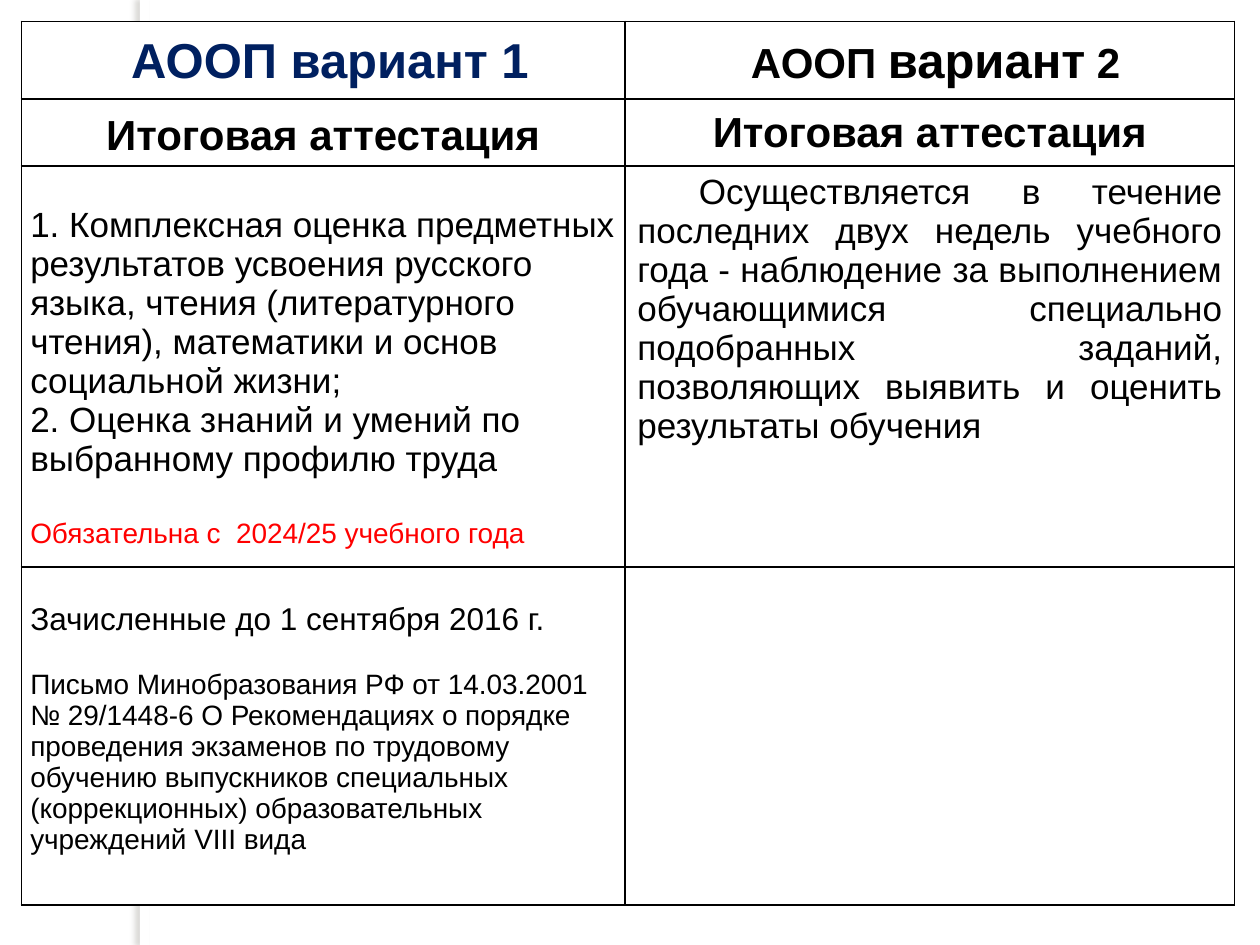
from typing import NamedTuple

from lxml.etree import SubElement
from pptx import Presentation
from pptx.dml.color import RGBColor
from pptx.enum.shapes import MSO_SHAPE
from pptx.enum.text import MSO_ANCHOR, PP_ALIGN
from pptx.oxml import parse_xml
from pptx.oxml.ns import nsdecls, qn
from pptx.util import Cm, Pt

WHITE = RGBColor(0xFF, 0xFF, 0xFF)
BLACK = RGBColor(0x00, 0x00, 0x00)
NAVY = RGBColor(0x00, 0x20, 0x60)
RED = RGBColor(0xFF, 0x00, 0x00)
SHADOW = RGBColor(0x73, 0x6F, 0x63)
FONT = "Arial"

COLUMN_SHARES = (0.4975, 0.5025)
ROW_HEIGHTS = (1.57, 1.35, 8.08, 6.81)
TITLE_MARGINS = (0.1, 0.1)
LEFT_MARGINS = (0.18, 0)
RIGHT_MARGINS = (0.25, 0.13)


class Box(NamedTuple):
    left: float
    top: float
    width: float
    height: float


def add_strip(slide, box):
    strip = slide.shapes.add_shape(MSO_SHAPE.RECTANGLE, *map(Cm, box))
    strip.fill.solid()
    strip.fill.fore_color.rgb = WHITE
    strip.line.fill.background()
    strip.shadow.inherit = False
    effects = strip._element.spPr.find(qn("a:effectLst"))
    effects.append(parse_xml(
        f'<a:outerShdw {nsdecls("a")} blurRad="{Pt(3)}" dist="{Pt(3)}" dir="10800000">'
        f'<a:srgbClr val="{SHADOW}"><a:alpha val="25000"/></a:srgbClr></a:outerShdw>'))


def style_cell(cell, margins, top_space=0, anchor=MSO_ANCHOR.TOP):
    properties = cell._tc.get_or_add_tcPr()
    for side in ("lnL", "lnR", "lnT", "lnB"):
        border = SubElement(properties, qn(f"a:{side}"), w=str(Pt(1)))
        fill = SubElement(border, qn("a:solidFill"))
        SubElement(fill, qn("a:srgbClr"), val=str(BLACK))
    cell.fill.solid()
    cell.fill.fore_color.rgb = WHITE
    side_margin, end_margin = margins
    cell.margin_left = cell.margin_right = Cm(side_margin)
    cell.margin_top = Cm(end_margin + top_space)
    cell.margin_bottom = Cm(end_margin)
    cell.vertical_anchor = anchor


def write_paragraph(cell, runs, bold=False, color=BLACK, align=PP_ALIGN.LEFT,
                    spacing=None, before=0, indent=0):
    text_frame = cell.text_frame
    paragraph = text_frame.add_paragraph() if cell.text else text_frame.paragraphs[0]
    paragraph.alignment = align
    if spacing:
        paragraph.line_spacing = spacing
    if before:
        paragraph.space_before = Pt(before)
    if indent:
        paragraph._p.get_or_add_pPr().set("indent", str(Cm(indent)))
    for text, size in runs:
        run = paragraph.add_run()
        run.text = text
        run.font.name = FONT
        run.font.size = Pt(size)
        run.font.bold = bold
        run.font.color.rgb = color


def fill_headings(table):
    headings = (
        (NAVY, [(" АООП вариант 1", 28)], LEFT_MARGINS, 1.15),
        (BLACK, [(" АООП ", 24), ("вариант", 28), (" 2", 24)], RIGHT_MARGINS, None),
    )
    for column, (color, runs, margins, spacing) in enumerate(headings):
        title, subtitle = table.cell(0, column), table.cell(1, column)
        style_cell(title, TITLE_MARGINS)
        write_paragraph(title, runs, True, color, PP_ALIGN.CENTER, 1.15)
        style_cell(subtitle, margins, anchor=MSO_ANCHOR.MIDDLE)
        write_paragraph(subtitle, [("Итоговая аттестация", 24)], True,
                        align=PP_ALIGN.CENTER, spacing=spacing)


def fill_details(table):
    assessment, observation = table.cell(2, 0), table.cell(2, 1)
    style_cell(assessment, LEFT_MARGINS, top_space=0.79)
    write_paragraph(assessment, [(
        "1. Комплексная оценка предметных результатов усвоения русского языка, "
        "чтения (литературного чтения), математики и основ социальной жизни;", 20)])
    write_paragraph(assessment, [(
        "2. Оценка знаний и умений по выбранному профилю труда", 20)])
    write_paragraph(assessment, [("Обязательна с  2024/25 учебного года", 16)],
                    color=RED, before=22.5)

    style_cell(observation, RIGHT_MARGINS)
    write_paragraph(observation, [(
        "Осуществляется в течение последних двух недель учебного года - наблюдение "
        "за выполнением обучающимися специально подобранных заданий, позволяющих "
        "выявить и оценить результаты обучения", 20)],
        align=PP_ALIGN.JUSTIFY, indent=1.24)

    enrolled, empty = table.cell(3, 0), table.cell(3, 1)
    style_cell(enrolled, LEFT_MARGINS, top_space=0.71)
    write_paragraph(enrolled, [("Зачисленные до 1 сентября 2016 г.", 18)])
    write_paragraph(enrolled, [(
        "Письмо Минобразования РФ от 14.03.2001 № 29/1448-6 О Рекомендациях о порядке "
        "проведения экзаменов по трудовому обучению выпускников специальных "
        "(коррекционных) образовательных учреждений VIII вида", 16)], before=18)
    style_cell(empty, RIGHT_MARGINS)


def add_comparison(slide, box):
    shape = slide.shapes.add_table(len(ROW_HEIGHTS), len(COLUMN_SHARES), *map(Cm, box))
    table = shape.table
    table.first_row = False
    table.horz_banding = False
    for column, share in zip(table.columns, COLUMN_SHARES):
        column.width = Cm(box.width * share)
    for row, height in zip(table.rows, ROW_HEIGHTS):
        row.height = Cm(height)
    fill_headings(table)
    fill_details(table)


def main():
    presentation = Presentation()
    presentation.slide_width = Cm(25.4)
    presentation.slide_height = Cm(19.05)
    slide = presentation.slides.add_slide(presentation.slide_layouts[6])
    slide.background.fill.solid()
    slide.background.fill.fore_color.rgb = WHITE
    add_strip(slide, Box(2.82, 0, 0.2, 19.05))
    add_comparison(slide, Box(0.43, 0.43, 24.46, sum(ROW_HEIGHTS)))
    presentation.save("out.pptx")


if __name__ == "__main__":
    main()
